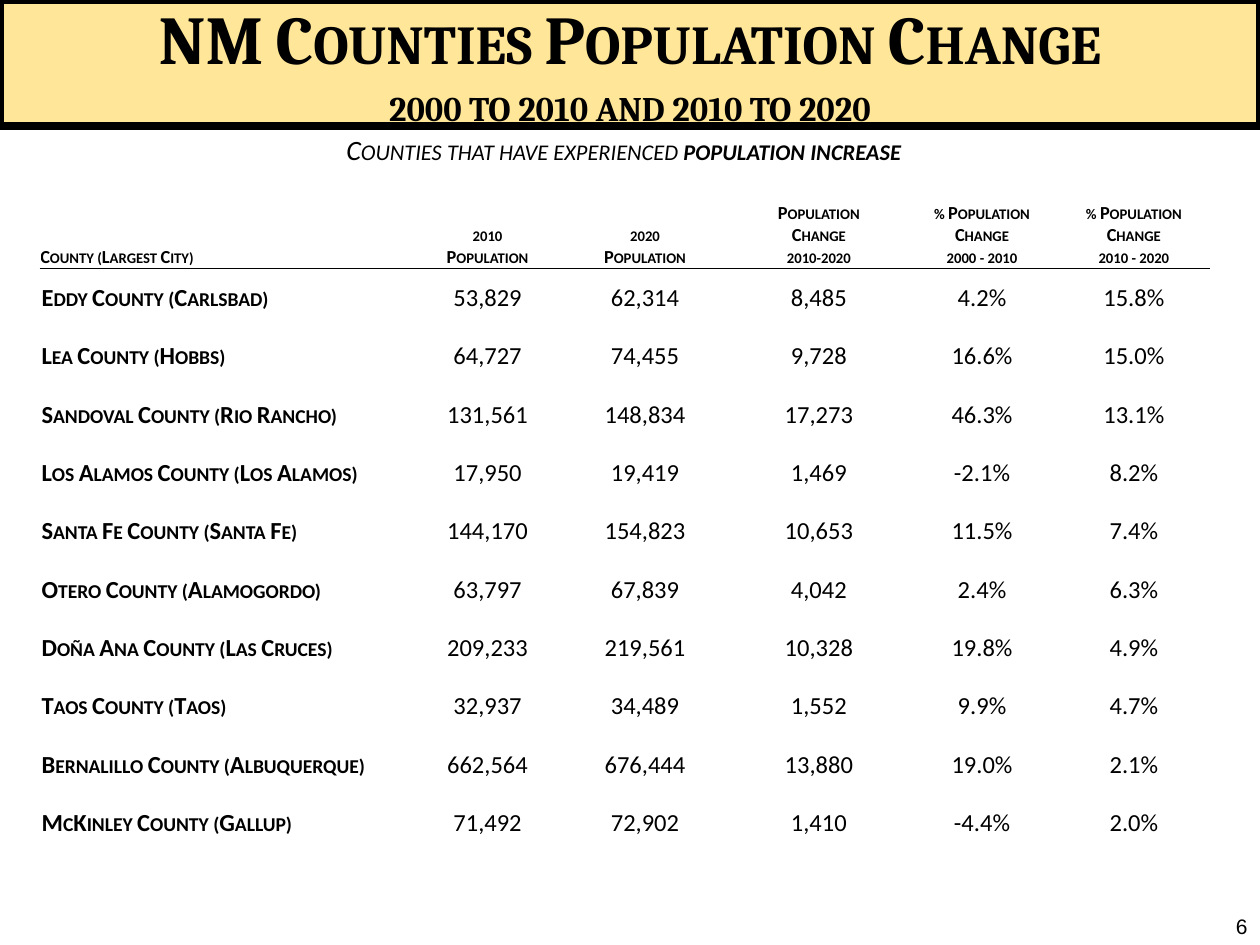
from lxml import etree
from pptx import Presentation
from pptx.dml.color import RGBColor
from pptx.enum.text import MSO_ANCHOR, MSO_AUTO_SIZE, PP_ALIGN
from pptx.oxml.ns import qn
from pptx.util import Inches, Pt

LEFT, CENTER, RIGHT = PP_ALIGN.LEFT, PP_ALIGN.CENTER, PP_ALIGN.RIGHT
MIDDLE, BOTTOM = MSO_ANCHOR.MIDDLE, MSO_ANCHOR.BOTTOM
NO_AUTOFIT = MSO_AUTO_SIZE.NONE
TITLE_ONLY = 5

THEME = {
    "ink": "000000", "paper": "FFFFFF", "banner": "FFE699",
    "title_font": "Cambria", "table_font": "Calibri", "number_font": "Arial",
    "title": 39.1, "years": 24.6, "subtitle": 16, "header": 10.5, "body": 14,
    "page": 12, "banner_line": 4.5, "rule": 1,
}

HEADERS = [
    "County (Largest City)", "2010\nPopulation", "2020\nPopulation",
    "Population\nChange\n2010-2020", "% Population Change\n2000 - 2010",
    "% Population Change\n2010 - 2020",
]
COUNTIES = [
    ("Eddy County (Carlsbad)", "53,829", "62,314", "8,485", "4.2%", "15.8%"),
    ("Lea County (Hobbs)", "64,727", "74,455", "9,728", "16.6%", "15.0%"),
    ("Sandoval County (Rio Rancho)", "131,561", "148,834", "17,273", "46.3%", "13.1%"),
    ("Los Alamos County (Los Alamos)", "17,950", "19,419", "1,469", "-2.1%", "8.2%"),
    ("Santa Fe County (Santa Fe)", "144,170", "154,823", "10,653", "11.5%", "7.4%"),
    ("Otero County (Alamogordo)", "63,797", "67,839", "4,042", "2.4%", "6.3%"),
    ("Doña Ana County (Las Cruces)", "209,233", "219,561", "10,328", "19.8%", "4.9%"),
    ("Taos County (Taos)", "32,937", "34,489", "1,552", "9.9%", "4.7%"),
    ("Bernalillo County (Albuquerque)", "662,564", "676,444", "13,880", "19.0%", "2.1%"),
    ("McKinley County (Gallup)", "71,492", "72,902", "1,410", "-4.4%", "2.0%"),
]
COLUMN_WIDTHS = [2.99, 1.12, 1.38, 1.38, 1.21, 1.2]
HEADER_HEIGHT, TABLE_HEIGHT = 0.69, 5.32


def style_paragraph(paragraph, font, size, align, bold=False, italic=False, small_caps=False):
    paragraph.alignment = align
    for run in paragraph.runs:
        run.font.name = THEME[font]
        run.font.size = Pt(THEME[size])
        run.font.bold, run.font.italic = bold, italic
        run.font.color.rgb = RGBColor.from_string(THEME["ink"])
        if small_caps:
            run.font._element.set("cap", "small")


def set_borders(cell, **colours):
    """Draw the cell's edges; keywords are L, R, T and B, in that order."""
    properties = cell._tc.get_or_add_tcPr()
    for side, colour in colours.items():
        edge = etree.SubElement(properties, qn(f"a:ln{side}"), w=str(Pt(THEME["rule"])))
        fill = etree.SubElement(edge, qn("a:solidFill"))
        etree.SubElement(fill, qn("a:srgbClr"), val=THEME[colour])


prs = Presentation()
prs.slide_width, prs.slide_height = Inches(10), Inches(7.5)
width, height = prs.slide_width, prs.slide_height
slide = prs.slides.add_slide(prs.slide_layouts[TITLE_ONLY])

# Title banner
banner = slide.shapes.title
banner.left, banner.top, banner.width, banner.height = 0, 0, width, Inches(1)
banner.fill.solid()
banner.fill.fore_color.rgb = RGBColor.from_string(THEME["banner"])
banner.line.color.rgb = RGBColor.from_string(THEME["ink"])
banner.line.width = Pt(THEME["banner_line"])
heading = banner.text_frame
heading.text = "NM Counties Population Change\n2000 to 2010 and 2010 to 2020"
heading.auto_size = NO_AUTOFIT
heading.vertical_anchor = MIDDLE
for paragraph, size in zip(heading.paragraphs, ("title", "years")):
    style_paragraph(paragraph, "title_font", size, CENTER, bold=True, small_caps=True)

# Subtitle
subtitle = slide.shapes.add_textbox(0, Inches(1), int(width * 0.99), Inches(0.37)).text_frame
subtitle.word_wrap = True
subtitle.text = "Counties that have experienced "
emphasis = subtitle.paragraphs[0].add_run()
emphasis.text = "population increase"
style_paragraph(subtitle.paragraphs[0], "table_font", "subtitle", CENTER,
                italic=True, small_caps=True)
emphasis.font.bold = True

# County table
table = slide.shapes.add_table(
    len(COUNTIES) + 1, len(HEADERS), Inches(0.32), Inches(1.44),
    Inches(sum(COLUMN_WIDTHS)), Inches(TABLE_HEIGHT)).table
table.first_row = table.horz_banding = False
for column, inches in zip(table.columns, COLUMN_WIDTHS):
    column.width = Inches(inches)
for row in table.rows:
    row.height = Inches((TABLE_HEIGHT - HEADER_HEIGHT) / len(COUNTIES))
table.rows[0].height = Inches(HEADER_HEIGHT)

for r, values in enumerate([HEADERS, *COUNTIES]):
    is_header = r == 0
    for c, value in enumerate(values):
        cell = table.cell(r, c)
        cell.text_frame.text = value
        cell.vertical_anchor = BOTTOM if is_header else MIDDLE
        inset = Inches(0 if is_header else 0.01)
        cell.margin_left = cell.margin_right = cell.margin_top = inset
        cell.margin_bottom = 0
        set_borders(cell, L="paper", R="paper", T="ink" if r == 1 else "paper",
                    B="ink" if is_header else "paper")
        cell.fill.background()
        is_label = is_header or c == 0
        for paragraph in cell.text_frame.paragraphs:
            style_paragraph(paragraph, "table_font", "header" if is_header else "body",
                            LEFT if c == 0 else CENTER, bold=is_label, small_caps=is_label)

# Page number
page = slide.shapes.add_textbox(int(width * 0.79), height - Inches(0.5),
                                int(width * 0.21), Inches(0.5)).text_frame
page.word_wrap = True
page.vertical_anchor = BOTTOM
page.text = "6"
style_paragraph(page.paragraphs[0], "number_font", "page", RIGHT)

prs.save("out.pptx")
